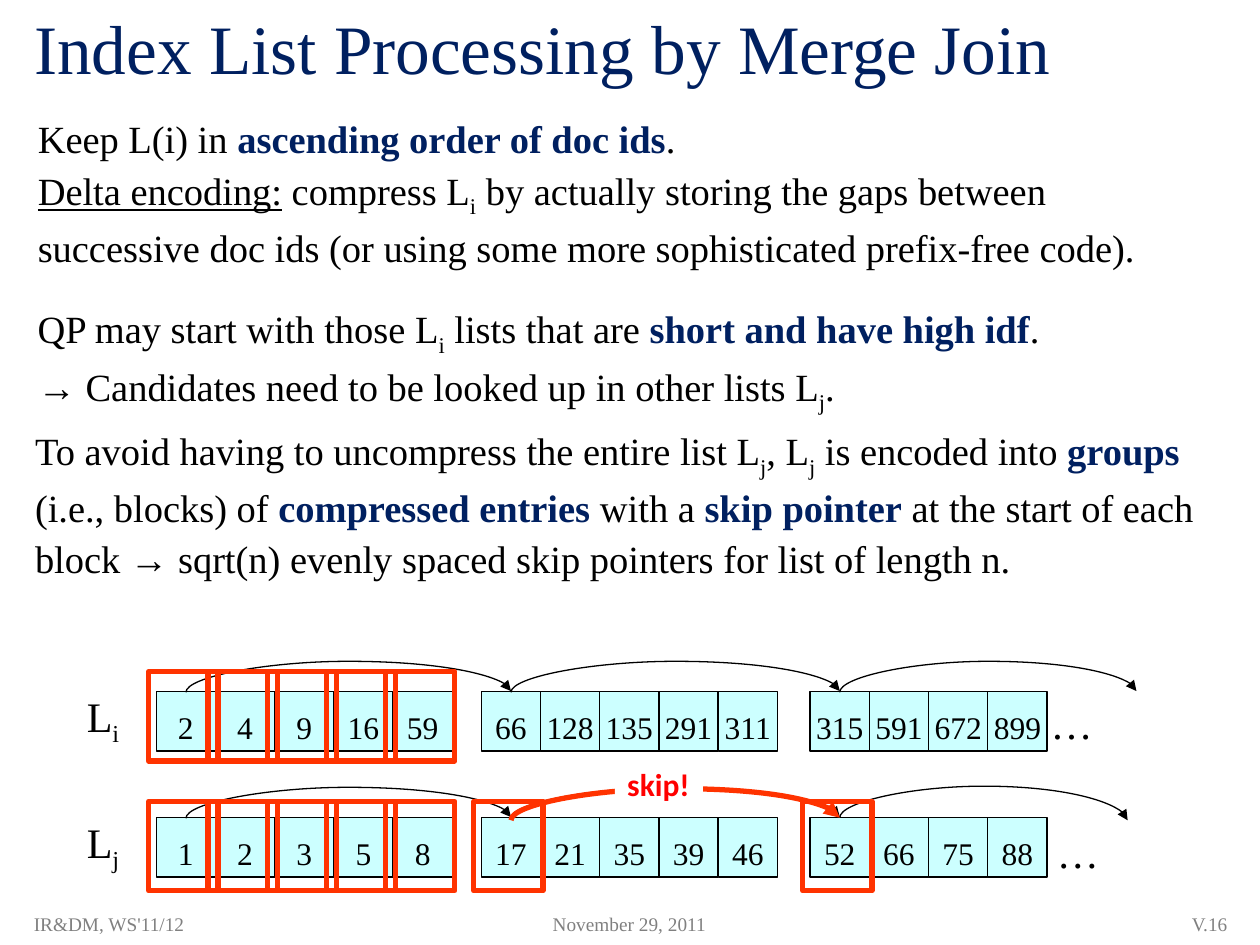
from dataclasses import dataclass
from typing import NamedTuple

from lxml.etree import SubElement
from pptx import Presentation
from pptx.dml.color import RGBColor
from pptx.enum.shapes import MSO_CONNECTOR as Conn, MSO_SHAPE as Shp
from pptx.enum.text import MSO_ANCHOR as Anchor, MSO_AUTO_SIZE as Auto, PP_ALIGN as Align
from pptx.oxml.ns import qn
from pptx.util import Inches, Pt

BLACK, NAVY, GREY, RED = "000000", "002060", "808080", "FF0000"
WHITE, CYAN, ORANGE = "FFFFFF", "CCFFFF", "FF3300"
SERIF = "Times New Roman"

# Grid of the posting lists, in inches
CELL = 0.47
GROUP_X = (1.24, 3.82, 6.43)
FRAME_W, FRAME_H = 0.55, 0.71
RISE = 0.25


class Run(NamedTuple):
    text: str
    color: str = BLACK
    bold: bool = False
    underline: bool = False
    sub: bool = False


class Box(NamedTuple):
    x: float
    y: float
    w: float
    h: float

    def emu(self):
        return [Inches(v) for v in self]


@dataclass
class PostingList:
    index: str
    y: float
    groups: list[list[int]]
    framed: list[tuple[int, int]]  # (group, cell) pairs already visited
    frame_rise: float
    last_arc: tuple[float, float]
    dots: Box


def key(text: str) -> Run:
    return Run(text, NAVY, bold=True)


def sub(text: str) -> Run:
    return Run(text, sub=True)


def rgb(color: str) -> RGBColor:
    return RGBColor.from_string(color)


def write(tf, paragraphs, size: float, font: str = SERIF, align=Align.LEFT,
          anchor=Anchor.TOP, spacing: float = 1.0, wrap: bool = True):
    tf.word_wrap, tf.vertical_anchor, tf.auto_size = wrap, anchor, Auto.NONE
    for i, runs in enumerate(paragraphs):
        p = tf.paragraphs[0] if i == 0 else tf.add_paragraph()
        p.alignment, p.line_spacing, p.space_before = align, spacing, Pt(0)
        for run in runs:
            r = p.add_run()
            r.text = run.text
            r.font.name, r.font.size = font, Pt(size)
            r.font.bold, r.font.underline = run.bold, run.underline
            r.font.color.rgb = rgb(run.color)
            if run.sub:
                r.font._element.set("baseline", "-25000")


def add_text(s, box: Box, paragraphs, size: float, **style):
    sp = s.shapes.add_textbox(*box.emu())
    write(sp.text_frame, paragraphs, size, **style)
    return sp


def place(sp, box: Box):
    sp.left, sp.top, sp.width, sp.height = box.emu()


def add_rect(s, box: Box, line: str, width: float, fill: str | None = None):
    sp = s.shapes.add_shape(Shp.RECTANGLE, *box.emu())
    sp.shadow.inherit = False
    if fill:
        sp.fill.solid()
        sp.fill.fore_color.rgb = rgb(fill)
    else:
        sp.fill.background()
    sp.line.color.rgb, sp.line.width = rgb(line), Pt(width)
    return sp


def add_cell(s, x: float, y: float, value: int):
    sp = add_rect(s, Box(x, y, CELL, CELL), BLACK, 0.75, CYAN)
    tf = sp.text_frame
    tf.margin_left = tf.margin_right = tf.margin_top = 0
    tf.margin_bottom = Inches(0.04)
    write(tf, [[Run(str(value))]], 18, align=Align.CENTER, anchor=Anchor.BOTTOM, wrap=False)


def add_arc(s, x1: float, y1: float, x2: float, y2: float, color: str, width: float):
    """Curved arrow that rises above its ends: a connector turned by 90 degrees."""
    span, drop = x2 - x1, max(abs(y2 - y1), 0.01)
    upward = y2 <= y1
    c = s.shapes.add_connector(Conn.CURVE, 0, 0, 1, 1)
    place(c, Box((x1 + x2 - drop) / 2, (y1 + y2 - span) / 2, drop, span))
    c.line.color.rgb, c.line.width = rgb(color), Pt(width)
    pr = c._element.spPr
    xfrm = pr.find(qn("a:xfrm"))
    xfrm.set("rot", "5400000")
    xfrm.set("flipV", "1")
    if upward:
        xfrm.set("flipH", "1")
    bend = round(RISE / drop * 100000) * (1 if upward else -1)
    guides = pr.find(qn("a:prstGeom")).get_or_add_avLst()
    SubElement(guides, qn("a:gd"), name="adj1", fmla=f"val {bend}")
    SubElement(c.line._get_or_add_ln(), qn("a:tailEnd"), type="triangle")
    SubElement(pr, qn("a:effectLst"))


def cell_x(group: int, cell: int) -> float:
    return GROUP_X[group] + cell * CELL


def add_posting_list(s, lst: PostingList):
    add_text(s, Box(0.59, lst.y - 0.06, 0.49, 0.5), [[Run("L"), sub(lst.index)]], 24, wrap=False)
    for g, values in enumerate(lst.groups):
        for i, value in enumerate(values):
            add_cell(s, cell_x(g, i), lst.y, value)
    add_text(s, lst.dots, [[Run("…")]], 24, wrap=False)
    # Pointers from group to group
    heads = [x + CELL / 2 for x in GROUP_X]
    ends = [(heads[1], lst.y), (heads[2], lst.y), lst.last_arc]
    for start, (x, y) in zip(heads, ends):
        add_arc(s, start, lst.y, x, y, BLACK, 0.75)
    # Frames around visited entries
    for g, i in lst.framed:
        add_rect(s, Box(cell_x(g, i) - 0.06, lst.y - lst.frame_rise, FRAME_W, FRAME_H), ORANGE, 3)


FIRST_GROUP = [(0, i) for i in range(5)]
LISTS = [
    PostingList("i", 5.49, [[2, 4, 9, 16, 59], [66, 128, 135, 291, 311], [315, 591, 672, 899]],
                FIRST_GROUP, 0.16, (9.02, 5.49), Box(8.24, 5.49, 0.53, 0.5)),
    PostingList("j", 6.49, [[1, 2, 3, 5, 8], [17, 21, 35, 39, 46], [52, 66, 75, 88]],
                FIRST_GROUP + [(1, 0), (2, 0)], 0.13, (8.95, 6.51), Box(8.29, 6.51, 0.53, 0.5)),
]

ORDER = [
    [Run("Keep L(i) in "), key("ascending order of doc ids"), Run(".")],
    [Run("Delta encoding:", underline=True), Run(" compress L"), sub("i"),
     Run(" by actually storing the gaps between")],
    [Run("successive doc ids (or using some more sophisticated prefix-free code).")],
]
LOOKUP = [
    [Run("QP may start with those L"), sub("i"), Run(" lists that are "),
     key("short and have high idf"), Run(".")],
    [Run("→ Candidates need to be looked up in other lists L"), sub("j"), Run(".")],
]
SKIPPING = [
    [Run("To avoid having to uncompress the entire list L"), sub("j"), Run(", L"), sub("j"),
     Run(" is encoded into "), key("groups "), Run("(i.e., blocks) of "),
     key("compressed entries"), Run(" with a "), key("skip pointer"),
     Run(" at the start of each block → sqrt(n) evenly spaced skip pointers"
         " for list of length n.")],
]
FOOTER = [
    (Box(0.17, 7.17, 3, 0.33), "IR&DM, WS'11/12", Align.LEFT),
    (Box(3.83, 7.17, 2.33, 0.33), "November 29, 2011", Align.CENTER),
    (Box(7.67, 7.17, 2.17, 0.33), "V.16", Align.RIGHT),
]


def main():
    prs = Presentation()
    prs.slide_width, prs.slide_height = Inches(10), Inches(7.5)
    s = prs.slides.add_slide(prs.slide_layouts[1])

    # Title and explanations
    title, body = s.placeholders
    place(title, Box(0.17, 0, 9.67, 0.75))
    write(title.text_frame, [[Run("Index List Processing by Merge Join", NAVY)]], 39.6,
          anchor=Anchor.MIDDLE)
    place(body, Box(0.2, 0.83, 9.08, 1.32))
    write(body.text_frame, ORDER, 22, spacing=1.1, wrap=False)
    for p in body.text_frame.paragraphs:
        pr = p._p.get_or_add_pPr()
        pr.set("marL", "0")
        pr.set("indent", "0")
        SubElement(pr, qn("a:buNone"))
    add_text(s, Box(0.2, 2.33, 9.45, 0.92), LOOKUP, 22, spacing=1.1)
    add_text(s, Box(0.18, 3.3, 9.47, 1.32), SKIPPING, 22, spacing=1.1)

    # Posting lists and the skip between groups
    for lst in LISTS:
        add_posting_list(s, lst)
    y = LISTS[1].y
    add_arc(s, GROUP_X[1] + CELL / 2, y + 0.02, GROUP_X[2] + CELL / 2, y, ORANGE, 3)
    skip = add_text(s, Box(4.88, 6.02, 0.7, 0.4), [[Run("skip!", RED, bold=True)]], 18,
                    font="Calibri", wrap=False)
    skip.fill.solid()
    skip.fill.fore_color.rgb = rgb(WHITE)

    # Footer
    for box, text, align in FOOTER:
        add_text(s, box, [[Run(text, GREY)]], 11, align=align, anchor=Anchor.MIDDLE)

    prs.save("out.pptx")


if __name__ == "__main__":
    main()
